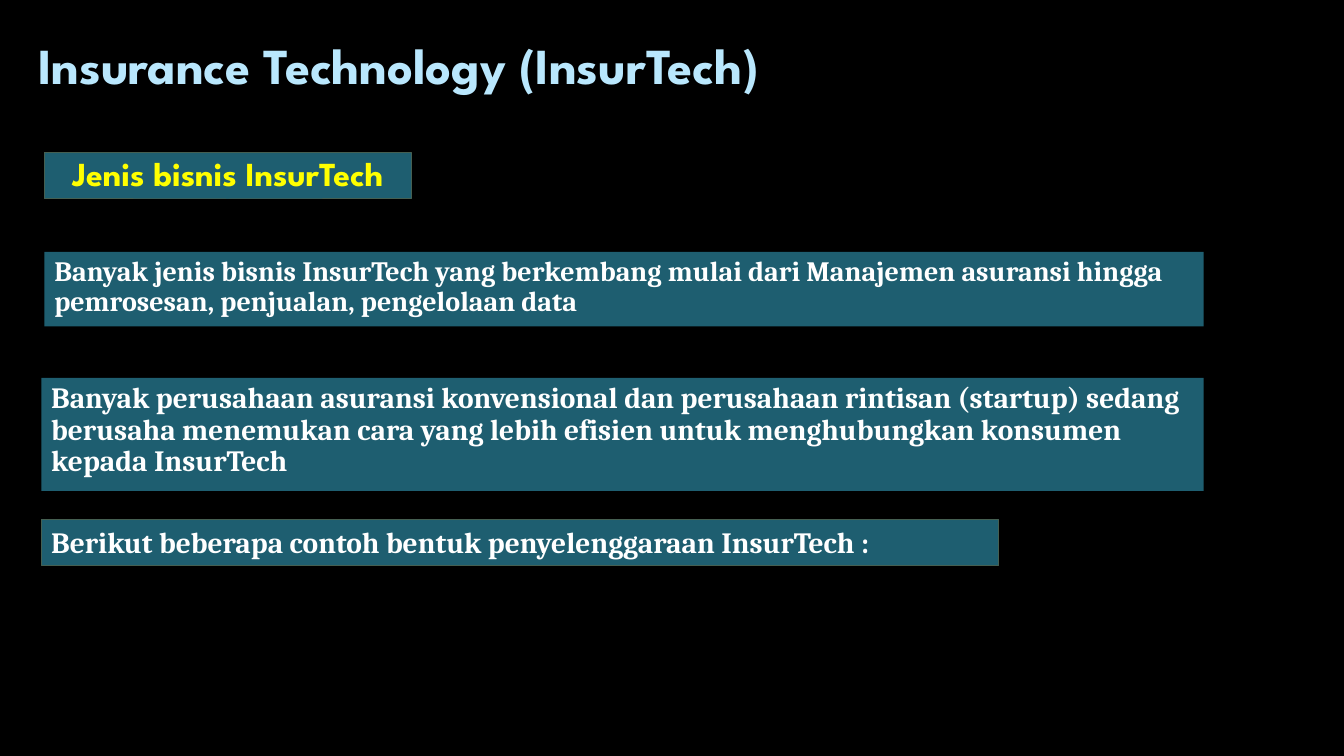
import pptx
import pptx.util
import pptx.dml.color
import pptx.enum.text
import pptx.enum.shapes

COLORS = {
    "background": "000000",
    "heading": "B9E7FD",
    "panel": "1E5E70",
    "border": "455F51",
    "subtitle": "FFFF00",
    "body": "FFFFFF",
}
SLIDE_WIDTH = pptx.util.Inches(13.333)
SLIDE_HEIGHT = pptx.util.Inches(7.5)
ANCHOR = pptx.enum.text.MSO_ANCHOR
ALIGN = pptx.enum.text.PP_ALIGN
AUTO_SIZE = pptx.enum.text.MSO_AUTO_SIZE

HEADING_FONT = {"name": "League Spartan", "size": pptx.util.Pt(36), "bold": True}
SUBTITLE_FONT = {**HEADING_FONT, "size": pptx.util.Pt(24)}
BODY_FONT = {"name": "Cambria", "size": pptx.util.Pt(21), "bold": True}
OVERVIEW_FONT = {**BODY_FONT, "size": pptx.util.Pt(20)}


def color(key):
    return pptx.dml.color.RGBColor.from_string(COLORS[key])


def apply(target, values):
    for attribute, value in values.items():
        setattr(target, attribute, value)


def area(left, top, width, height):
    return {
        "left": round(SLIDE_WIDTH * left / 100),
        "top": round(SLIDE_HEIGHT * top / 100),
        "width": round(SLIDE_WIDTH * width / 100),
        "height": round(SLIDE_HEIGHT * height / 100),
    }


def write(holder, text, font, ink, anchor, align=ALIGN.LEFT, spacing=0.9):
    frame = holder.text_frame
    apply(frame, {"word_wrap": True, "auto_size": AUTO_SIZE.NONE, "vertical_anchor": anchor})
    paragraph = frame.paragraphs[0]
    paragraph.text = text
    apply(paragraph, {"alignment": align, "line_spacing": spacing})
    apply(paragraph.font, font)
    paragraph.font.color.rgb = color(ink)


def add_heading(slide, text, place):
    heading = slide.shapes.title
    apply(heading, place)
    write(heading, text, HEADING_FONT, "heading", ANCHOR.BOTTOM)


def add_panel(slide, text, place, font, ink="body", bordered=False, anchor=ANCHOR.TOP, **layout):
    panel = slide.shapes.add_shape(pptx.enum.shapes.MSO_SHAPE.RECTANGLE, **place)
    panel.shadow.inherit = False
    panel.fill.solid()
    panel.fill.fore_color.rgb = color("panel")
    if bordered:
        panel.line.color.rgb = color("border")
        panel.line.width = pptx.util.Pt(0.75)
    else:
        panel.line.fill.background()
    write(panel, text, font, ink, anchor, **layout)


def main():
    deck = pptx.Presentation()
    apply(deck, {"slide_width": SLIDE_WIDTH, "slide_height": SLIDE_HEIGHT})
    slide = deck.slides.add_slide(deck.slide_layouts[5])
    slide.background.fill.solid()
    slide.background.fill.fore_color.rgb = color("background")

    add_heading(slide, "Insurance Technology (InsurTech)", area(2.1, 3.47, 85, 9.87))
    add_panel(slide, "Jenis bisnis InsurTech", area(3.3, 20.2, 27.3, 6.13),
              SUBTITLE_FONT, "subtitle", True, ANCHOR.MIDDLE, align=ALIGN.CENTER)
    add_panel(slide, "Banyak jenis bisnis InsurTech yang berkembang mulai dari Manajemen asuransi "
              "hingga pemrosesan, penjualan, pengelolaan data",
              area(3.3, 33.33, 86.25, 9.87), OVERVIEW_FONT)
    add_panel(slide, "Banyak perusahaan asuransi konvensional dan perusahaan rintisan (startup) sedang "
              "berusaha menemukan cara yang lebih efisien untuk menghubungkan konsumen kepada InsurTech",
              area(3.07, 50, 86.48, 14.93), BODY_FONT)
    add_panel(slide, "Berikut beberapa contoh bentuk penyelenggaraan InsurTech :",
              area(3.07, 68.7, 71.25, 6.13), BODY_FONT, bordered=True, spacing=1.0)
    deck.save("out.pptx")


if __name__ == "__main__":
    main()
